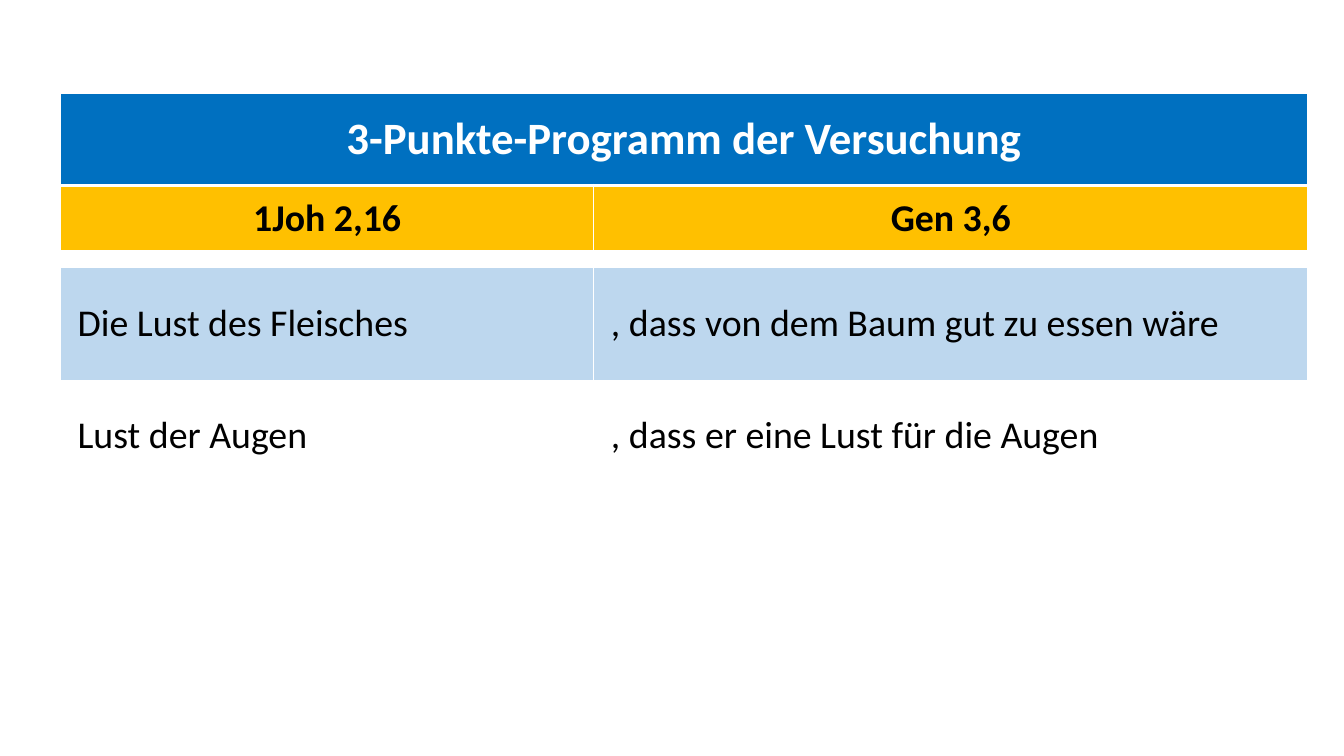
from dataclasses import dataclass

from lxml.etree import SubElement
from pptx import Presentation
from pptx.dml.color import RGBColor
from pptx.enum.text import MSO_ANCHOR, PP_ALIGN
from pptx.oxml.ns import qn
from pptx.util import Inches, Pt


@dataclass(frozen=True)
class Theme:
    font: str = "Calibri"
    title: int = 32
    body: int = 27
    tiny: int = 1
    blue: str = "0070C0"
    gold: str = "FFC000"
    pale: str = "BDD7EE"
    white: str = "FFFFFF"
    black: str = "000000"
    thin: int = 1
    thick: int = 3


class Deck:
    def __init__(self, theme):
        self.theme = theme
        self.show = Presentation()
        self.show.slide_width = Inches(13.33)
        self.show.slide_height = Inches(7.5)
        self.slide = self.show.slides.add_slide(self.show.slide_layouts[6])

    def grid(self, left, top, widths, heights):
        """Add an empty table with the given column widths and row heights."""
        frame = self.slide.shapes.add_table(
            len(heights), len(widths), Inches(left), Inches(top),
            Inches(sum(widths)), Inches(sum(heights)))
        table = frame.table
        table.horz_banding = False
        for col, width in zip(table.columns, widths):
            col.width = Inches(width)
        for row, height in zip(table.rows, heights):
            row.height = Inches(height)
        return table

    def edge(self, cell, side, width):
        """Draw one white border of a cell."""
        props = cell._tc.get_or_add_tcPr()
        line = SubElement(props, qn(f"a:ln{side}"), w=str(Pt(width)))
        fill = SubElement(line, qn("a:solidFill"))
        SubElement(fill, qn("a:srgbClr"), val=self.theme.white)

    def cell(self, cell, text, fill, size, color, bold, align, top, bottom):
        """Give a cell its borders, fill and text."""
        thin = self.theme.thin
        for side, width in zip("LRTB", (thin, thin, top, bottom)):
            self.edge(cell, side, width)
        cell.fill.solid()
        cell.fill.fore_color.rgb = RGBColor.from_string(fill)
        cell.vertical_anchor = MSO_ANCHOR.MIDDLE
        cell.margin_left = cell.margin_right = Inches(0.17)
        cell.margin_top = cell.margin_bottom = 0
        para = cell.text_frame.paragraphs[0]
        para.alignment = align
        if not text:
            # An empty cell needs a small type size to keep its row low
            SubElement(para._p, qn("a:endParaRPr"), sz=str(size * 100))
            return
        para.text = text
        font = para.runs[0].font
        font.name, font.size, font.bold = self.theme.font, Pt(size), bold
        font.color.rgb = RGBColor.from_string(color)


def main():
    theme = Theme()
    deck = Deck(theme)

    # Table frame with a title row across both columns
    table = deck.grid(0.6, 0.93, (5.29, 7.08), (0.91, 0.65, 0.16, 1.13, 1.09))
    table.cell(0, 0).merge(table.cell(0, 1))

    # Row content: texts, fill, size, text colour, bold, alignment
    mid, left = PP_ALIGN.CENTER, PP_ALIGN.LEFT
    rows = [
        (("3-Punkte-Programm der Versuchung", ""),
         theme.blue, theme.title, theme.white, True, mid),
        (("1Joh 2,16", "Gen 3,6"),
         theme.gold, theme.body, theme.black, True, mid),
        (("", ""), theme.white, theme.tiny, theme.black, False, left),
        (("Die Lust des Fleisches", ", dass von dem Baum gut zu essen wäre"),
         theme.pale, theme.body, theme.black, False, left),
        (("Lust der Augen", ", dass er eine Lust für die Augen"),
         theme.white, theme.body, theme.black, False, left),
    ]

    # Fill the table; a thick rule parts the title from the rest
    for r, (texts, *style) in enumerate(rows):
        top = theme.thick if r == 1 else theme.thin
        bottom = theme.thick if r == 0 else theme.thin
        for c, text in enumerate(texts):
            deck.cell(table.cell(r, c), text, *style, top, bottom)

    deck.show.save("out.pptx")


if __name__ == "__main__":
    main()
